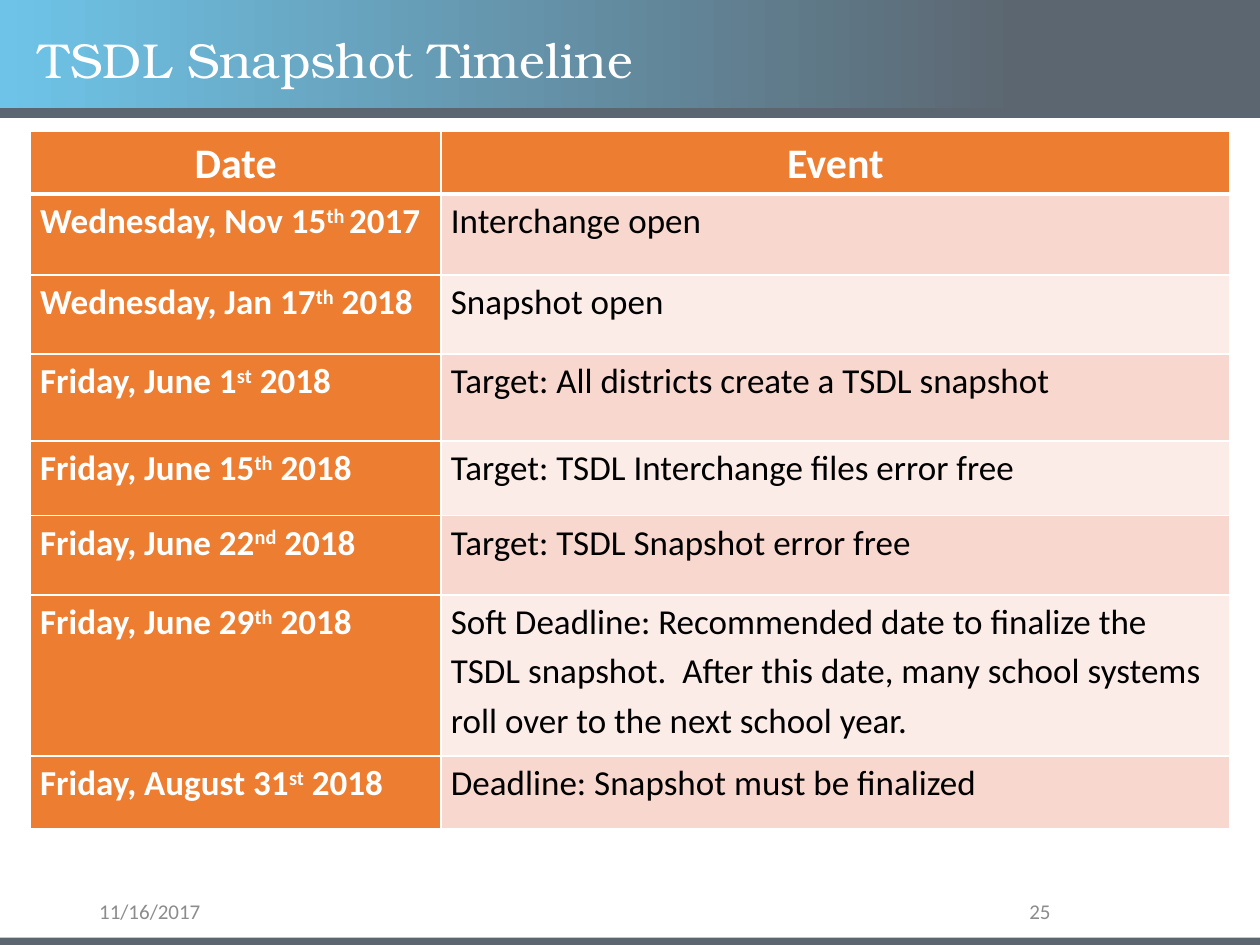
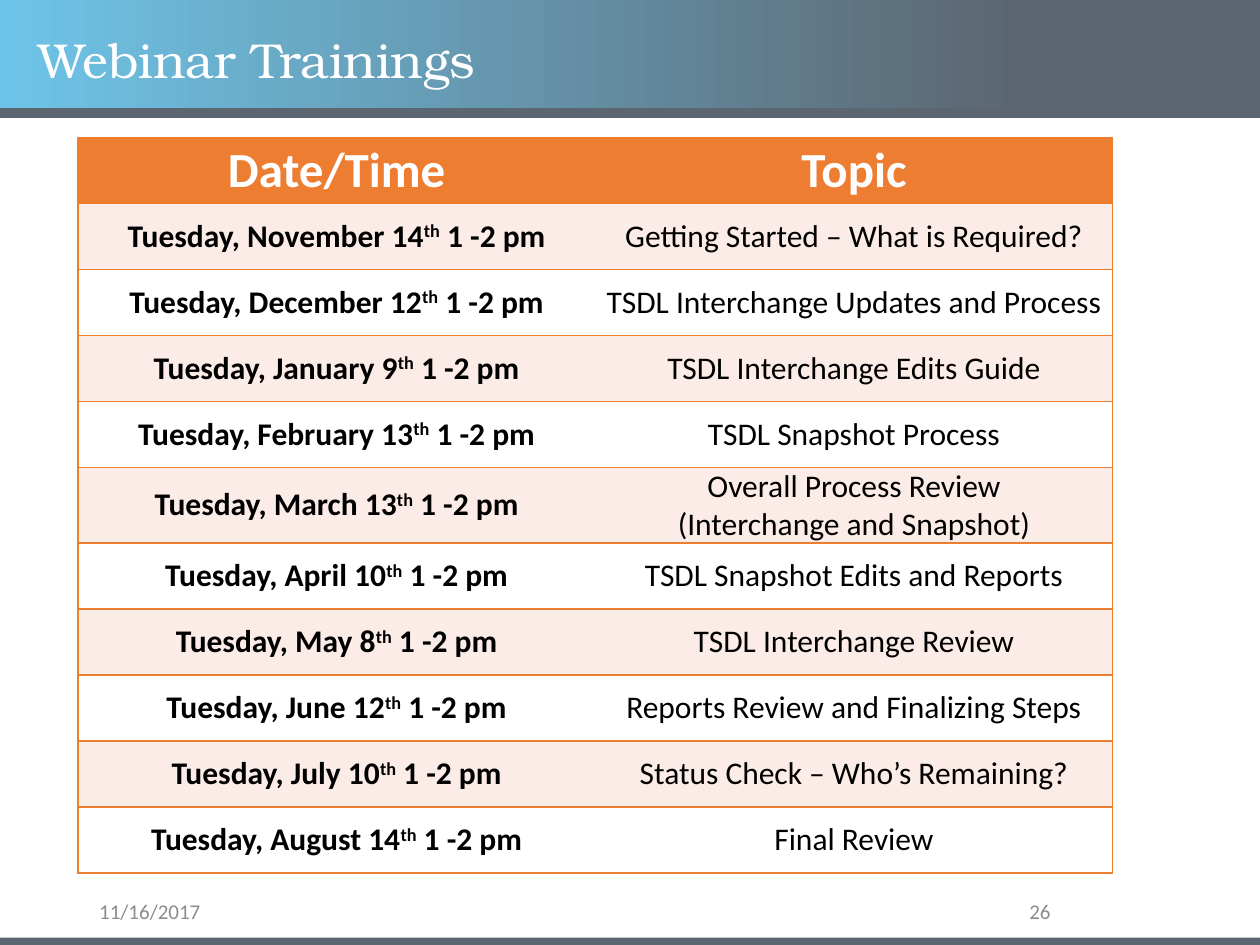
from lxml.etree import SubElement
from pptx import Presentation
from pptx.dml.color import RGBColor as Rgb
from pptx.enum.shapes import MSO_SHAPE as Shape
from pptx.enum.text import MSO_ANCHOR as Anchor, MSO_AUTO_SIZE as Fit, PP_ALIGN as Align
from pptx.oxml.ns import qn
from pptx.util import Cm, Pt

# Text between carets is raised.
DATES = [
    ("Date", "Event", 1.27),
    ("Wednesday, Nov 15^th ^2017", "Interchange open", 1.63),
    ("Wednesday, Jan 17^th^ 2018", "Snapshot open", 1.6),
    ("Friday, June 1^st^ 2018", "Target: All districts create a TSDL snapshot", 1.75),
    ("Friday, June 15^th^ 2018", "Target: TSDL Interchange files error free", 1.5),
    ("Friday, June 22^nd^ 2018", "Target: TSDL Snapshot error free", 1.6),
    ("Friday, June 29^th^ 2018",
     "Soft Deadline: Recommended date to finalize the TSDL snapshot.  "
     "After this date, many school systems roll over to the next school year.", 3.25),
    ("Friday, August 31^st^ 2018", "Deadline: Snapshot must be finalized", 1.47),
]
TOPICS = [
    ("November 14", "Getting Started – What is Required?"),
    ("December 12", "TSDL Interchange Updates and Process"),
    ("January 9", "TSDL Interchange Edits Guide"),
    ("February 13", "TSDL Snapshot Process"),
    ("March 13", "Overall Process Review\n(Interchange and Snapshot)"),
    ("April 10", "TSDL Snapshot Edits and Reports"),
    ("May 8", "TSDL Interchange Review"),
    ("June 12", "Reports Review and Finalizing Steps"),
    ("July 10", "Status Check – Who’s Remaining?"),
    ("August 14", "Final Review"),
]
DAY, FIRST = "11/16/2017", 25


class Theme:
    sky, slate, gray = "6EC4E8", "5C6670", "8C8C8C"
    orange, rose, blush = "ED7D31", "F8D7CE", "FCECE8"
    white, black = "FFFFFF", "000000"
    body, serif = "Calibri", "TeX Gyre Bonum"
    title = dict(name=serif, size=Pt(28), bold=False)
    foot = dict(name=body, size=Pt(12))
    date_head = dict(name=body, size=Pt(24), bold=True)
    date_text = dict(name=body, size=Pt(20))
    topic_head = dict(name=body, size=Pt(28), bold=True)
    topic_text = dict(name=body, size=Pt(18))


WIDE, HIGH = 25.4, 19.05
BANDS = [(0, 2.2), (2.18, 0.2), (18.9, 0.15)]
TITLE = (0.53, 0.53, 21.9, 1.45)
FOOT_TOP, FOOT_HIGH = 18.08, 0.58


def put(item, values):
    for name, value in values.items():
        setattr(item, name, value)


def write(frame, text, font, color, **form):
    """Fill a text frame; carets mark raised text, newlines split paragraphs."""
    for n, line in enumerate(text.split("\n")):
        para = frame.add_paragraph() if n else frame.paragraphs[0]
        put(para, form)
        for k, part in enumerate(line.split("^")):
            if not part:
                continue
            run = para.add_run()
            run.text = part
            put(run.font, font)
            run.font.color.rgb = Rgb.from_string(color)
            if k % 2:
                run.font._element.set("baseline", "30000")


def bands(slide, layout):
    """Draw the shared bands and move them into the layout."""
    for n, (top, high) in enumerate(BANDS):
        band = slide.shapes.add_shape(Shape.RECTANGLE, 0, Cm(top), Cm(WIDE), Cm(high))
        band.shadow.inherit = False
        band.line.fill.background()
        if n:
            band.fill.solid()
            band.fill.fore_color.rgb = Rgb.from_string(Theme.slate)
        else:
            band.fill.gradient()
            band.fill.gradient_angle = 0
            stops = [(0, Theme.sky), (0.81, Theme.slate)]
            for stop, (place, color) in zip(band.fill.gradient_stops, stops):
                stop.position = place
                stop.color.rgb = Rgb.from_string(color)
        layout.shapes._spTree.append(band._element)


def start(deck, title, page):
    """Add a slide with its title, date and page number."""
    layout = deck.slide_layouts[5]
    slide = deck.slides.add_slide(layout)
    if page == FIRST:
        bands(slide, layout)
    head = slide.shapes.title
    put(head, dict(zip(("left", "top", "width", "height"), map(Cm, TITLE))))
    put(head.text_frame, dict(auto_size=Fit.NONE, word_wrap=True,
                              vertical_anchor=Anchor.MIDDLE))
    write(head.text_frame, title, Theme.title, Theme.white,
          alignment=Align.LEFT, line_spacing=0.9)
    for text, left, wide, side in [(DAY, 1.75, 5.72, Align.LEFT),
                                   (str(page), 17.93, 3.5, Align.RIGHT)]:
        box = slide.shapes.add_textbox(Cm(left), Cm(FOOT_TOP), Cm(wide), Cm(FOOT_HIGH))
        put(box.text_frame, dict(word_wrap=True, vertical_anchor=Anchor.MIDDLE))
        write(box.text_frame, text, Theme.foot, Theme.gray, alignment=side)
    return slide


def grid(slide, left, top, cols, rows):
    """Add an unstyled table with the given column widths and row heights."""
    table = slide.shapes.add_table(len(rows), len(cols), Cm(left), Cm(top),
                                   Cm(sum(cols)), Cm(sum(rows))).table
    put(table, dict(first_row=False, horz_banding=False))
    style = table._tbl.tblPr.find(qn("a:tableStyleId"))
    style.text = "{2D5ABB26-0587-4C30-8999-92F81FD0307C}"
    for col, wide in zip(table.columns, cols):
        col.width = Cm(wide)
    for row, high in zip(table.rows, rows):
        row.height = Cm(high)
    return table


def dress(cell, fill, color, edges, pad, anchor):
    """Set borders, then fill, margins and anchor; edges maps L, R, T, B to points."""
    props = cell._tc.get_or_add_tcPr()
    for side in "LRTB":
        if side in edges:
            line = SubElement(props, qn("a:ln" + side), w=str(Pt(edges[side])))
            SubElement(SubElement(line, qn("a:solidFill")), qn("a:srgbClr"), val=color)
    cell.fill.solid()
    cell.fill.fore_color.rgb = Rgb.from_string(fill)
    put(cell, dict(margin_left=Cm(pad), margin_right=Cm(pad), margin_top=0,
                   margin_bottom=0, vertical_anchor=anchor))


def timeline(slide):
    table = grid(slide, 0.61, 2.64, (8.28, 15.9), [row[2] for row in DATES])
    for r, row in enumerate(DATES):
        for c, text in enumerate(row[:2]):
            cell, head = table.cell(r, c), r == 0
            key = head or c == 0
            fill = Theme.orange if key else (Theme.blush, Theme.rose)[r % 2]
            edges = dict(L=1, R=1, T=3 if r == 1 else 1, B=3 if head else 1)
            dress(cell, fill, Theme.white, edges, 0.2, Anchor.TOP)
            font = Theme.date_head if head else dict(Theme.date_text, bold=key)
            write(cell.text_frame, text, font, Theme.white if key else Theme.black,
                  alignment=Align.CENTER if head else Align.LEFT, line_spacing=1.15)


def webinars(slide):
    rows = [("Date/Time", "Topic")]
    rows += [(f"Tuesday, {day}^th^ 1 -2 pm", topic) for day, topic in TOPICS]
    table = grid(slide, 1.57, 2.77, (10.43, 10.43), [1.33] * len(rows))
    for r, row in enumerate(rows):
        for c, text in enumerate(row):
            cell, head = table.cell(r, c), r == 0
            fill = Theme.orange if head else (Theme.white, Theme.blush)[r % 2]
            dress(cell, fill, Theme.orange, {"LR"[c]: 1, "T": 1, "B": 1}, 0.18, Anchor.MIDDLE)
            font = Theme.topic_head if head else dict(Theme.topic_text, bold=c == 0)
            write(cell.text_frame, text, font, Theme.white if head else Theme.black,
                  alignment=Align.CENTER)


def main():
    deck = Presentation()
    put(deck, dict(slide_width=Cm(WIDE), slide_height=Cm(HIGH)))
    parts = [("TSDL Snapshot Timeline", timeline), ("Webinar Trainings", webinars)]
    for page, (title, fill) in enumerate(parts, FIRST):
        fill(start(deck, title, page))
    deck.save("out.pptx")


if __name__ == "__main__":
    main()
